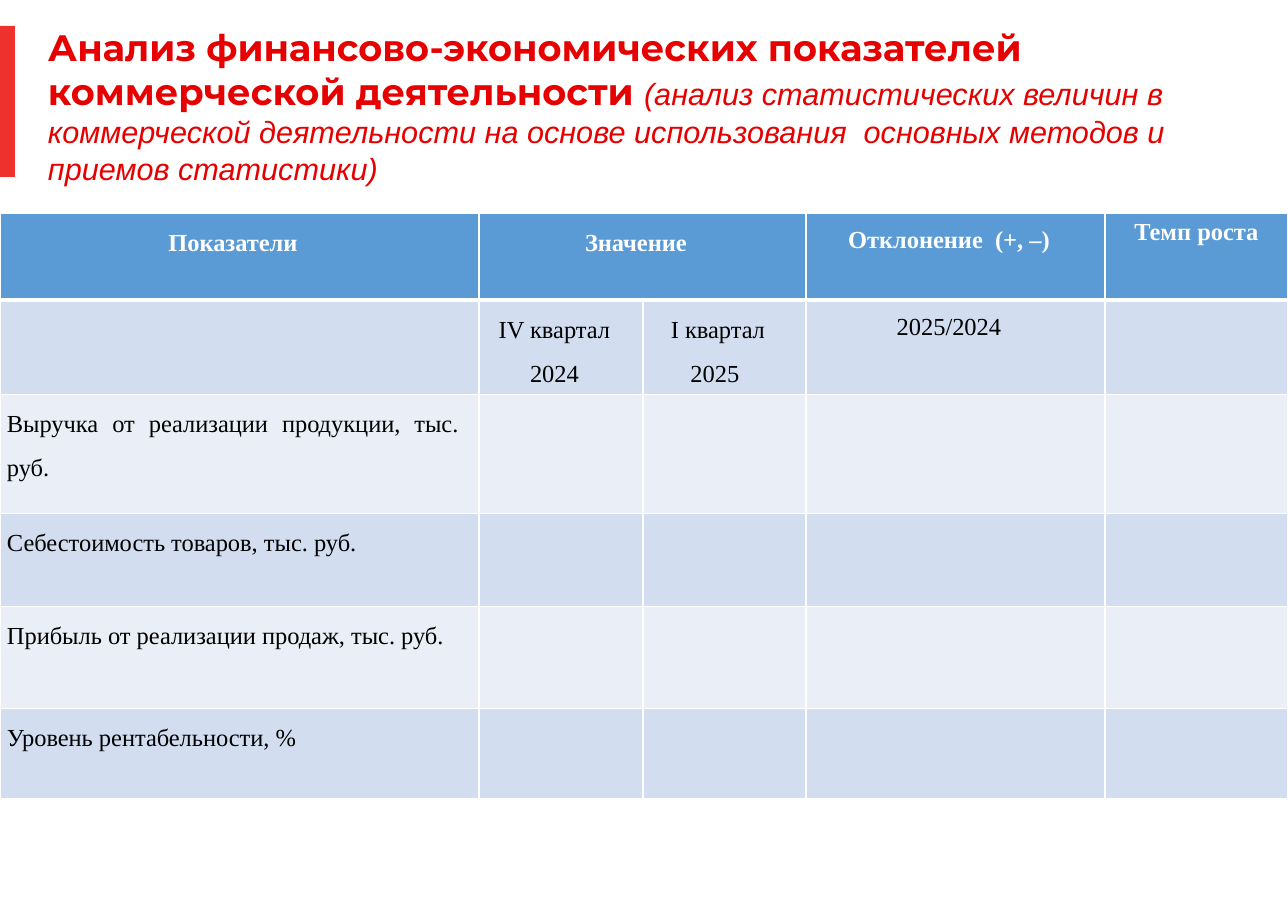
"""Builds a slide with a table of commercial performance indicators."""
import pptx
import pptx.dml.color
import pptx.enum.shapes
import pptx.enum.text
import pptx.util
import lxml.etree

RGBColor = pptx.dml.color.RGBColor
Pt = pptx.util.Pt
ALIGN = pptx.enum.text.PP_ALIGN
ANCHOR = pptx.enum.text.MSO_ANCHOR

WHITE = RGBColor(0xFF, 0xFF, 0xFF)
BLACK = RGBColor(0, 0, 0)
ACCENT_RED = RGBColor(0xEE, 0x31, 0x2C)
TITLE_RED = RGBColor(0xE6, 0x00, 0x00)
HEADER_BLUE = RGBColor(0x5B, 0x9B, 0xD5)
BAND_DARK = RGBColor(0xD2, 0xDE, 0xEF)
BAND_LIGHT = RGBColor(0xEA, 0xEF, 0xF7)

EMU_PER_PX = 8300
WIDTH, HEIGHT = 1288, 911
COLUMNS = [479, 164, 163, 299, 183]
ROWS = [87, 90, 119, 93, 102, 90]
TABLE_TOP = 213

TITLE_RUNS = [
    ("Анализ финансово-экономических показателей коммерческой деятельности ",
     "Montserrat", 24, True, False),
    ("(анализ статистических величин в коммерческой деятельности на основе "
     "использования  основных методов и приемов статистики)",
     "Arial", 20, False, True),
]
TABLE_TEXT = [
    ["Показатели", "Значение", "", "Отклонение  (+, –)", "Темп роста"],
    ["", "IV квартал 2024", "I квартал 2025 ", "2025/2024", ""],
    ["Выручка от реализации продукции, тыс. руб."],
    ["Себестоимость товаров, тыс. руб."],
    ["Прибыль от реализации продаж, тыс. руб."],
    ["Уровень рентабельности, %"],
]


def px(n):
    """Turn whole pixels into EMU."""
    return pptx.util.Emu(n * EMU_PER_PX)


def add_run(p, text, font, size, color, bold=False, italic=False):
    """Add one formatted run to a paragraph."""
    r = p.add_run()
    r.text = text
    r.font.name = font
    r.font.size = Pt(size)
    r.font.bold = bold
    r.font.italic = italic
    r.font.color.rgb = color


def add_accent_bar(s):
    """Draw the red bar at the left edge."""
    sp = s.shapes.add_shape(pptx.enum.shapes.MSO_SHAPE.RECTANGLE,
                            px(0), px(26), px(15), px(151))
    sp.shadow.inherit = False
    sp.fill.solid()
    sp.fill.fore_color.rgb = ACCENT_RED
    sp.line.fill.background()


def add_title(s):
    """Add the two-style heading."""
    tf = s.shapes.add_textbox(px(48), px(25), px(1203), px(162)).text_frame
    tf.word_wrap = True
    tf.vertical_anchor = ANCHOR.TOP
    tf.margin_left = tf.margin_right = tf.margin_top = tf.margin_bottom = 0
    for text, font, size, bold, italic in TITLE_RUNS:
        add_run(tf.paragraphs[0], text, font, size, TITLE_RED, bold, italic)


def set_borders(cell, row):
    """Give a cell white borders, thick between header and body."""
    tc_pr = cell._tc.get_or_add_tcPr()
    thick = {0: "lnB", 1: "lnT"}.get(row)
    ns = "{http://schemas.openxmlformats.org/drawingml/2006/main}"
    for side in ("lnL", "lnR", "lnT", "lnB"):
        ln = lxml.etree.SubElement(tc_pr, ns + side)
        ln.set("w", str(Pt(3 if side == thick else 1)))
        fill = lxml.etree.SubElement(ln, ns + "solidFill")
        lxml.etree.SubElement(fill, ns + "srgbClr").set("val", str(WHITE))


def set_cell_text(cell, text, row, col):
    """Write a cell's text with the layout of its row and column."""
    p = cell.text_frame.paragraphs[0]
    p.alignment = ALIGN.JUSTIFY if row > 1 else ALIGN.CENTER
    if col < 4:
        cell.margin_left, cell.margin_right = px(7), px(20)
        cell.margin_top = cell.margin_bottom = 0
        p.line_spacing = 1.5 if col == 3 else 1.61
        p.space_after = Pt(0.6)
    add_run(p, text, "Times New Roman", 16, BLACK if row else WHITE, bold=row == 0)


def add_indicator_table(s):
    """Add the table of indicators."""
    table = s.shapes.add_table(len(ROWS), len(COLUMNS), px(0), px(TABLE_TOP),
                               px(sum(COLUMNS)), px(sum(ROWS))).table
    table.horz_banding = False
    for column, width in zip(table.columns, COLUMNS):
        column.width = px(width)
    for row, height in enumerate(ROWS):
        table.rows[row].height = px(height)
        band = BAND_DARK if row % 2 else BAND_LIGHT
        for col in range(len(COLUMNS)):
            cell = table.cell(row, col)
            set_borders(cell, row)
            cell.fill.solid()
            cell.fill.fore_color.rgb = band if row else HEADER_BLUE
        for col, text in enumerate(TABLE_TEXT[row]):
            if text:
                set_cell_text(table.cell(row, col), text, row, col)
    table.cell(0, 1).merge(table.cell(0, 2))


def main():
    """Build and save the slide."""
    prs = pptx.Presentation()
    prs.slide_width, prs.slide_height = px(WIDTH), px(HEIGHT)
    s = prs.slides.add_slide(prs.slide_layouts[6])
    add_accent_bar(s)
    add_title(s)
    add_indicator_table(s)
    prs.save("out.pptx")


if __name__ == "__main__":
    main()
